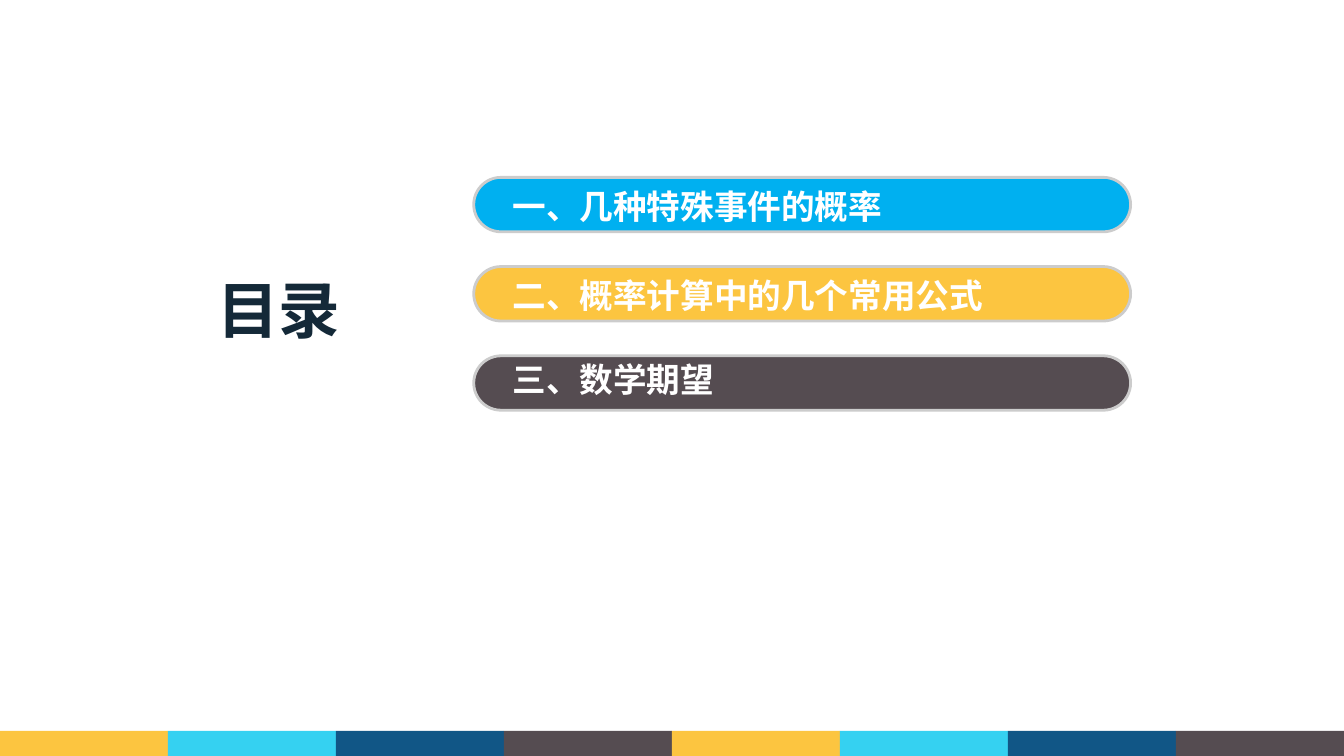
from dataclasses import dataclass

from lxml.etree import SubElement
from pptx import Presentation
from pptx.dml.color import RGBColor
from pptx.enum.shapes import MSO_SHAPE
from pptx.enum.text import MSO_ANCHOR, MSO_AUTO_SIZE, PP_ALIGN
from pptx.oxml.ns import qn
from pptx.util import Inches, Pt

COLS, ROWS = 8, 30


@dataclass(frozen=True)
class Theme:
    font: str = "Noto Sans CJK SC"
    white: str = "FFFFFF"
    ink: str = "142938"
    edge: str = "CCCCCC"
    blue: str = "00B0F0"
    gold: str = "FCC540"
    cyan: str = "35D1F1"
    navy: str = "115686"
    plum: str = "554C51"
    head: int = 44
    item: int = 24


def put(para, text, *, font, size, color, align=PP_ALIGN.LEFT, before=0):
    """Write one bold run without a bullet."""
    props = para._p.get_or_add_pPr()
    props.set("marL", "0")
    props.set("indent", "0")
    SubElement(props, qn("a:buNone"))
    para.alignment = align
    para.space_before = Pt(before)
    run = para.add_run()
    run.text = text
    run.font.name = font
    run.font.size = Pt(size)
    run.font.bold = True
    run.font.color.rgb = RGBColor.from_string(color)
    SubElement(run.font._element, qn("a:ea")).set("typeface", font)


class Deck:
    def __init__(self, theme):
        self.theme = theme
        self.show = Presentation()
        self.show.slide_width = Inches(13.33)
        self.show.slide_height = Inches(7.5)
        self.slide = self.show.slides.add_slide(self.show.slide_layouts[1])

    def area(self, col, row, wide, high):
        """Turn grid columns and rows into slide lengths."""
        dx = self.show.slide_width / COLS
        dy = self.show.slide_height / ROWS
        return round(col * dx), round(row * dy), round(wide * dx), round(high * dy)

    def block(self, home, kind, area, fill):
        shape = home.add_shape(kind, *self.area(*area))
        shape.shadow.inherit = False
        shape.fill.solid()
        shape.fill.fore_color.rgb = RGBColor.from_string(fill)
        shape.line.fill.background()
        return shape

    def pill(self, area, fill):
        shape = self.block(self.slide.shapes, MSO_SHAPE.ROUNDED_RECTANGLE, area, fill)
        shape.adjustments[0] = 0.5
        shape.line.color.rgb = RGBColor.from_string(self.theme.edge)
        shape.line.width = Pt(2)

    def strip(self, row, fills):
        group = self.slide.shapes.add_group_shape()
        for col, fill in enumerate(fills):
            self.block(group.shapes, MSO_SHAPE.RECTANGLE, (col, row, 1, 1), fill)

    def frame(self, holder, area, anchor):
        """Place a placeholder in front and return its text frame."""
        holder.left, holder.top, holder.width, holder.height = self.area(*area)
        holder.element.getparent().append(holder.element)
        frame = holder.text_frame
        frame.word_wrap = True
        frame.auto_size = MSO_AUTO_SIZE.NONE
        frame.vertical_anchor = anchor
        return frame

    def title(self, text, area):
        frame = self.frame(self.slide.shapes.title, area, MSO_ANCHOR.MIDDLE)
        put(frame.paragraphs[0], text, font=self.theme.font, size=self.theme.head,
            color=self.theme.ink, align=PP_ALIGN.CENTER)

    def items(self, rows, area):
        frame = self.frame(self.slide.placeholders[1], area, MSO_ANCHOR.TOP)
        for i, (text, gap) in enumerate(rows):
            para = frame.add_paragraph() if i else frame.paragraphs[0]
            put(para, text, font=self.theme.font, size=self.theme.item,
                color=self.theme.white, before=gap)


def main():
    theme = Theme()
    deck = Deck(theme)

    # Coloured bars behind the contents
    for i, fill in enumerate((theme.blue, theme.gold, theme.plum)):
        deck.pill((2.82, 7.04 + 3.54 * i, 3.91, 2.16), fill)

    # Contents, each with the gap above it in points
    deck.items([("一、几种特殊事件的概率", 0),
                ("二、概率计算中的几个常用公式", 35),
                ("三、数学期望", 31.5)], (2.99, 7.16, 3.74, 9.3))

    # Heading
    deck.title("目录", (1.22, 10.56, 0.88, 3.36))

    # Bottom strip
    deck.strip(ROWS - 1, (theme.gold, theme.cyan, theme.navy, theme.plum) * 2)

    deck.show.save("out.pptx")


if __name__ == "__main__":
    main()
